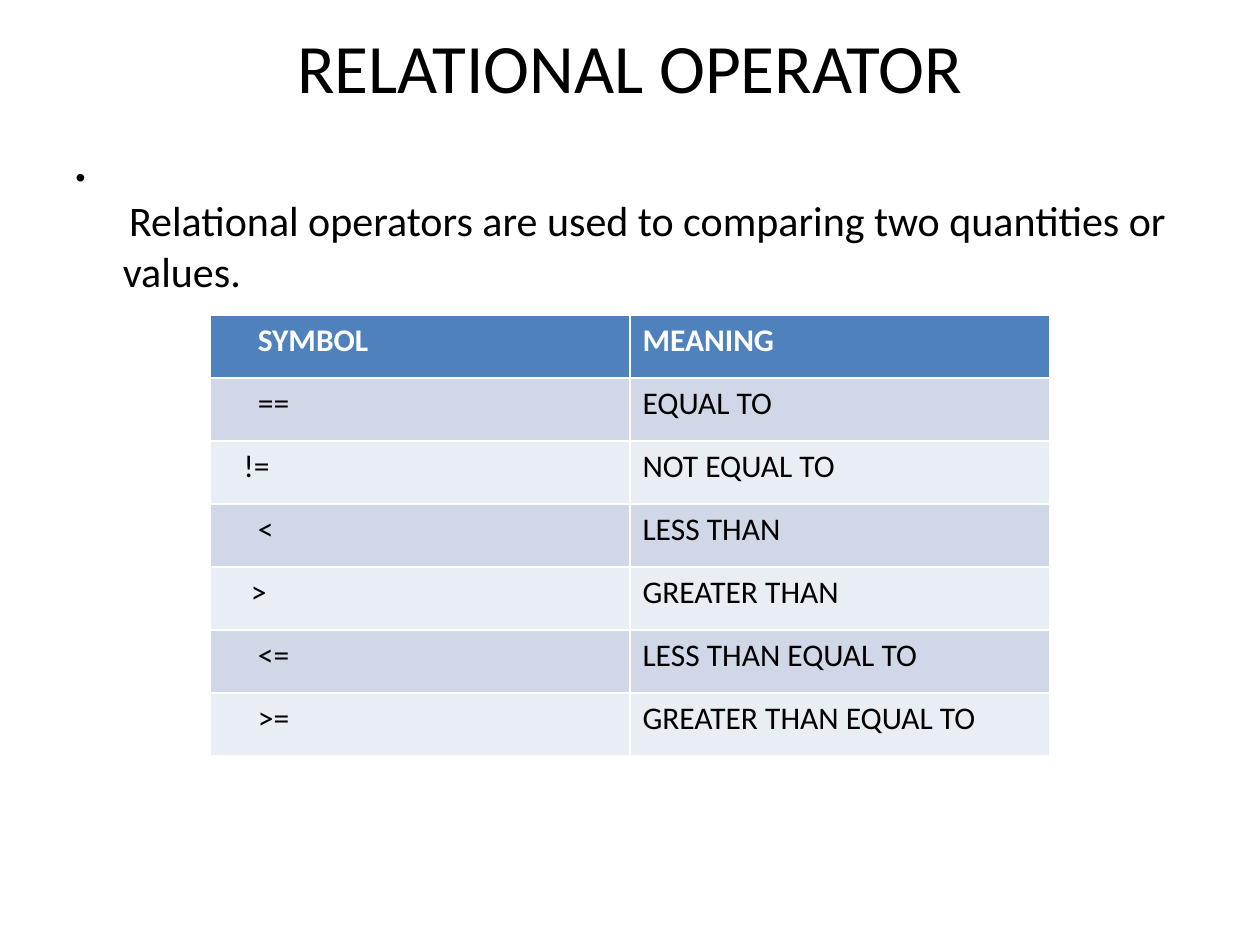
from lxml.etree import SubElement
from pptx import Presentation
from pptx.dml.color import RGBColor
from pptx.enum.text import MSO_ANCHOR, MSO_AUTO_SIZE, PP_ALIGN
from pptx.oxml.ns import qn
from pptx.util import Inches, Pt

WIDTH, HEIGHT = Inches(10), Inches(7.5)
BLACK, WHITE, HEADER = "000000", "FFFFFF", "4F81BD"
BANDS = ("D0D8E8", "E9EDF4")
SPACE_WIDTH = Inches(0.056)
OPERATORS = [
    ("SYMBOL", 5, "MEANING"),
    ("==", 5, "EQUAL TO"),
    ("!=", 3, "NOT EQUAL TO"),
    ("<", 5, "LESS THAN"),
    (">", 4, "GREATER THAN"),
    ("<=", 5, "LESS THAN EQUAL TO"),
    (">=", 5, "GREATER THAN EQUAL TO"),
]


def color(value):
    """Turn a hex string into a colour."""
    return RGBColor.from_string(value)


def assign(target, values):
    """Set each attribute named in a dict of format values."""
    for name, value in values.items():
        setattr(target, name, value)


def place(shape, box):
    """Move a placeholder to a box given as shares of the slide."""
    left, top, width, height = box
    assign(shape, {
        "left": int(WIDTH * left), "top": int(HEIGHT * top),
        "width": int(WIDTH * width), "height": int(HEIGHT * height),
    })
    shape.text_frame.auto_size = MSO_AUTO_SIZE.NONE


def write(para, text, size, ink=BLACK, bold=False):
    """Add a formatted span of text to a paragraph."""
    span = para.add_run()
    span.text = text
    assign(span.font, {"name": "Calibri", "size": Pt(size), "bold": bold})
    span.font.color.rgb = color(ink)


def add_title(page, box):
    """Fill the title placeholder."""
    title = page.shapes.title
    place(title, box)
    title.text_frame.vertical_anchor = MSO_ANCHOR.MIDDLE
    para = title.text_frame.paragraphs[0]
    para.alignment = PP_ALIGN.CENTER
    write(para, "RELATIONAL OPERATOR", 39.6)


def add_body(page, box):
    """Fill the body placeholder with a bullet whose text starts a line lower."""
    body = page.placeholders[1]
    place(body, box)
    body.text_frame.margin_top = Inches(0.36)
    para = body.text_frame.paragraphs[0]
    para.add_line_break()
    line_break = para._p.find(qn("a:br"))
    SubElement(line_break, qn("a:rPr"), sz="1600")
    write(para, " ", 16)
    write(para, "Relational operators are used to comparing two quantities or values.", 24)


def add_operator_table(page, box):
    """Draw the table of symbols and meanings in banded rows."""
    left, top, width, height = box
    table = page.shapes.add_table(
        len(OPERATORS), 2, int(WIDTH * left), int(HEIGHT * top),
        int(WIDTH * width), int(HEIGHT * height)).table
    for row, (symbol, spaces, meaning) in enumerate(OPERATORS):
        is_header = row == 0
        fill = HEADER if is_header else BANDS[(row - 1) % 2]
        ink = WHITE if is_header else BLACK
        for column, (text, indent) in enumerate([(symbol, spaces), (meaning, 0)]):
            cell = table.cell(row, column)
            cell.margin_left = Inches(0.1) + indent * SPACE_WIDTH
            cell.fill.solid()
            cell.fill.fore_color.rgb = color(fill)
            write(cell.text_frame.paragraphs[0], text, 18, ink, is_header)


def main():
    """Build and save the slide."""
    deck = Presentation()
    assign(deck, {"slide_width": WIDTH, "slide_height": HEIGHT})
    page = deck.slides.add_slide(deck.slide_layouts[1])
    page.background.fill.solid()
    page.background.fill.fore_color.rgb = color(WHITE)
    add_title(page, (0.05, 0.04, 0.9, 0.06))
    add_body(page, (0.05, 0.92 / 7.5, 0.9, 6.58 / 7.5))
    add_operator_table(page, (1 / 6, 1 / 3, 2 / 3, 3.5 / 7.5))
    deck.save("out.pptx")


if __name__ == "__main__":
    main()
